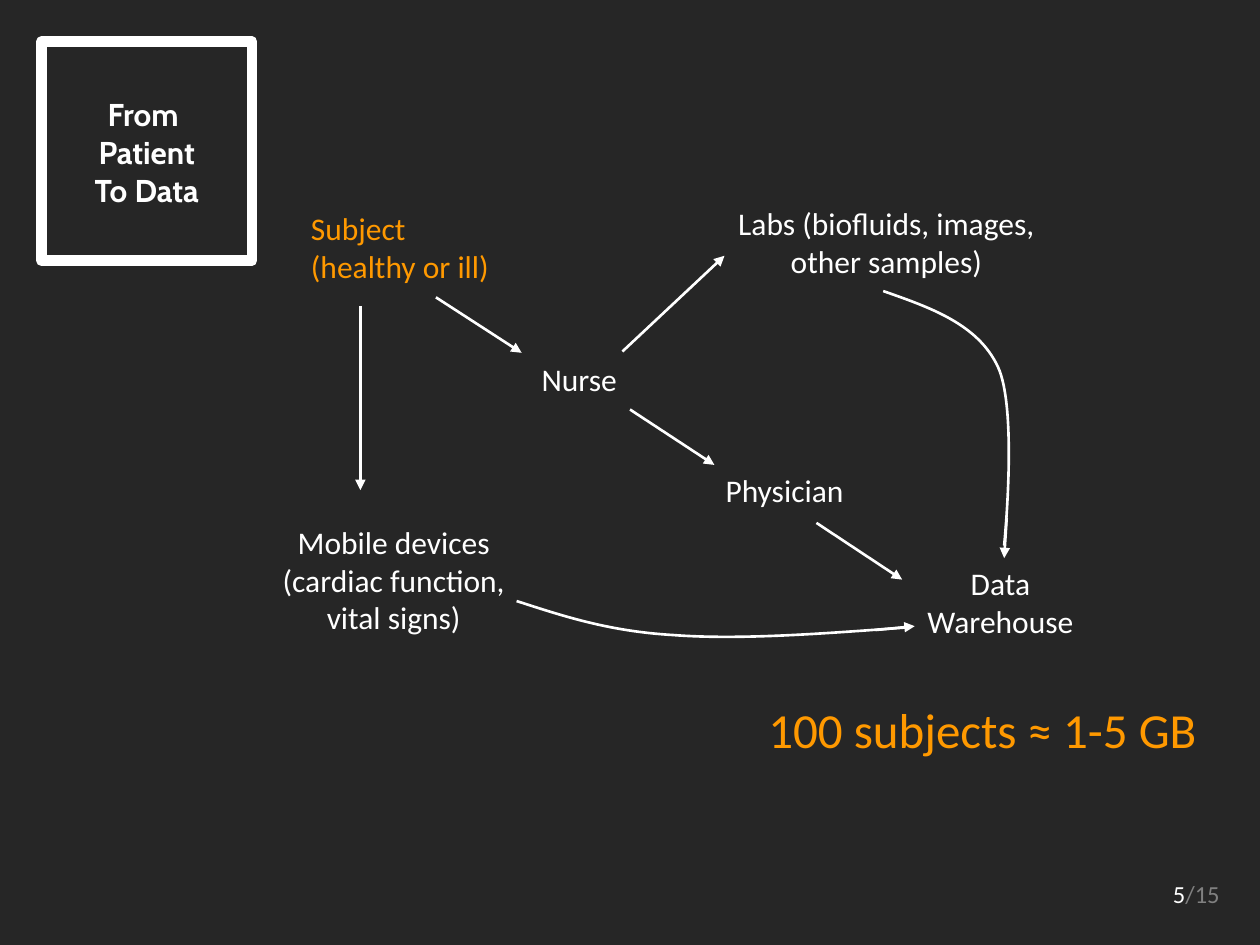
from dataclasses import dataclass

from lxml import etree
from pptx import Presentation
from pptx.dml.color import RGBColor
from pptx.enum.shapes import MSO_CONNECTOR, MSO_SHAPE
from pptx.enum.text import MSO_ANCHOR, MSO_AUTO_SIZE, PP_ALIGN
from pptx.oxml.ns import qn
from pptx.util import Pt

PX = 9144  # 100 px to the inch
RECT = MSO_SHAPE.RECTANGLE
LINE = MSO_CONNECTOR.STRAIGHT
LEFT, MID = PP_ALIGN.LEFT, PP_ALIGN.CENTER
TOP, CENTER = MSO_ANCHOR.TOP, MSO_ANCHOR.MIDDLE
GROW = MSO_AUTO_SIZE.SHAPE_TO_FIT_TEXT


@dataclass(frozen=True)
class Theme:
    back: str = "262626"
    white: str = "FFFFFF"
    gray: str = "808080"
    orange: str = "FF9900"
    head: str = "Cabin"
    body: str = "Calibri"
    small: int = 14
    base: int = 18
    big: int = 28
    thin: float = 1.5
    thick: float = 6


def emu(*nums):
    return [n * PX for n in nums]


def apply(item, **vals):
    for name, val in vals.items():
        setattr(item, name, val)


class Board:
    def __init__(self, slide, theme):
        self.slide, self.theme = slide, theme
        self.shapes = slide.shapes
        fill = slide.background.fill
        fill.solid()
        fill.fore_color.rgb = RGBColor.from_string(theme.back)

    def stroke(self, line, width):
        line.color.rgb = RGBColor.from_string(self.theme.white)
        line.width = Pt(width)

    def style(self, run, color=None, size=None, face=None, bold=False):
        t = self.theme
        apply(run.font, name=face or t.body, size=Pt(size or t.base), bold=bold)
        run.font.color.rgb = RGBColor.from_string(color or t.white)

    def text(self, words, at, align=LEFT, anchor=TOP, wrap=False, **font):
        frame = self.shapes.add_textbox(*emu(*at)).text_frame
        frame.text = words
        apply(frame, word_wrap=wrap, auto_size=GROW, vertical_anchor=anchor)
        for para in frame.paragraphs:
            para.alignment = align
            for run in para.runs:
                self.style(run, **font)
        return frame

    def frame(self, at):
        box = self.shapes.add_shape(RECT, *emu(*at))
        box.shadow.inherit = False
        box.fill.background()
        self.stroke(box.line, self.theme.thick)

    def arrow(self, start, end):
        link = self.shapes.add_connector(LINE, *emu(*start, *end))
        self.stroke(link.line, self.theme.thin)
        etree.SubElement(link.line._get_or_add_ln(), qn("a:tailEnd"), type="triangle")
        etree.SubElement(link._element.spPr, qn("a:effectLst"))

    def curve(self, start, *points):
        """Draw Bezier segments, each given by two control points and an end."""
        pen = self.shapes.build_freeform(*start, scale=PX)
        pen.add_line_segments(points, close=False)
        shape = pen.convert_to_shape()
        shape.shadow.inherit = False
        shape.fill.background()
        self.stroke(shape.line, self.theme.thin)
        legs = shape._element.xpath(".//a:lnTo")
        for i in range(0, len(legs), 3):
            bend = etree.SubElement(legs[i].getparent(), qn("a:cubicBezTo"))
            for leg in legs[i:i + 3]:
                bend.append(leg[0])
                leg.getparent().remove(leg)


def main():
    deck = Presentation()
    apply(deck, slide_width=1000 * PX, slide_height=750 * PX)
    theme = Theme()
    board = Board(deck.slides.add_slide(deck.slide_layouts[6]), theme)

    board.frame((33, 33, 167, 174))
    board.text("From \vPatient\nTo Data", (63, 70, 107, 101), MID, CENTER,
               face=theme.head, bold=True)

    page = board.text("5", (921, 693, 58, 34), size=theme.small)
    total = page.paragraphs[0].add_run()
    total.text = "/15"
    board.style(total, theme.gray, theme.small)

    board.text("Subject (healthy or ill)", (237, 161, 183, 71), wrap=True,
               color=theme.orange)
    board.text("Physician", (566, 369, 119, 40))
    board.text("Nurse", (420, 281, 82, 40))
    for words, at in (
        ("Data Warehouse", (715, 443, 158, 71)),
        ("Mobile devices (cardiac function, vital signs)", (204, 410, 217, 101)),
        ("Labs (biofluids, images, other samples)", (566, 157, 275, 71)),
    ):
        board.text(words, at, MID, wrap=True)

    board.curve((410, 477), (447, 489), (483, 501), (534, 504),
                (586, 508), (652, 503), (719, 498))
    board.curve((701, 231), (738, 244), (776, 257), (792, 291),
                (808, 325), (797, 433), (797, 433))
    for start, end in (
        ((346, 236), (414, 280)),  # subject to nurse
        ((500, 325), (567, 369)),  # nurse to physician
        ((648, 415), (716, 460)),  # physician to warehouse
        ((286, 243), (286, 389)),  # subject to devices
        ((695, 500), (726, 497)),  # devices to warehouse
        ((494, 279), (575, 203)),  # nurse to labs
        ((799, 411), (797, 443)),  # labs to warehouse
    ):
        board.arrow(start, end)

    board.text("100 subjects ≈ 1-5 GB", (600, 550, 360, 57),
               color=theme.orange, size=theme.big)
    deck.save("out.pptx")


if __name__ == "__main__":
    main()
